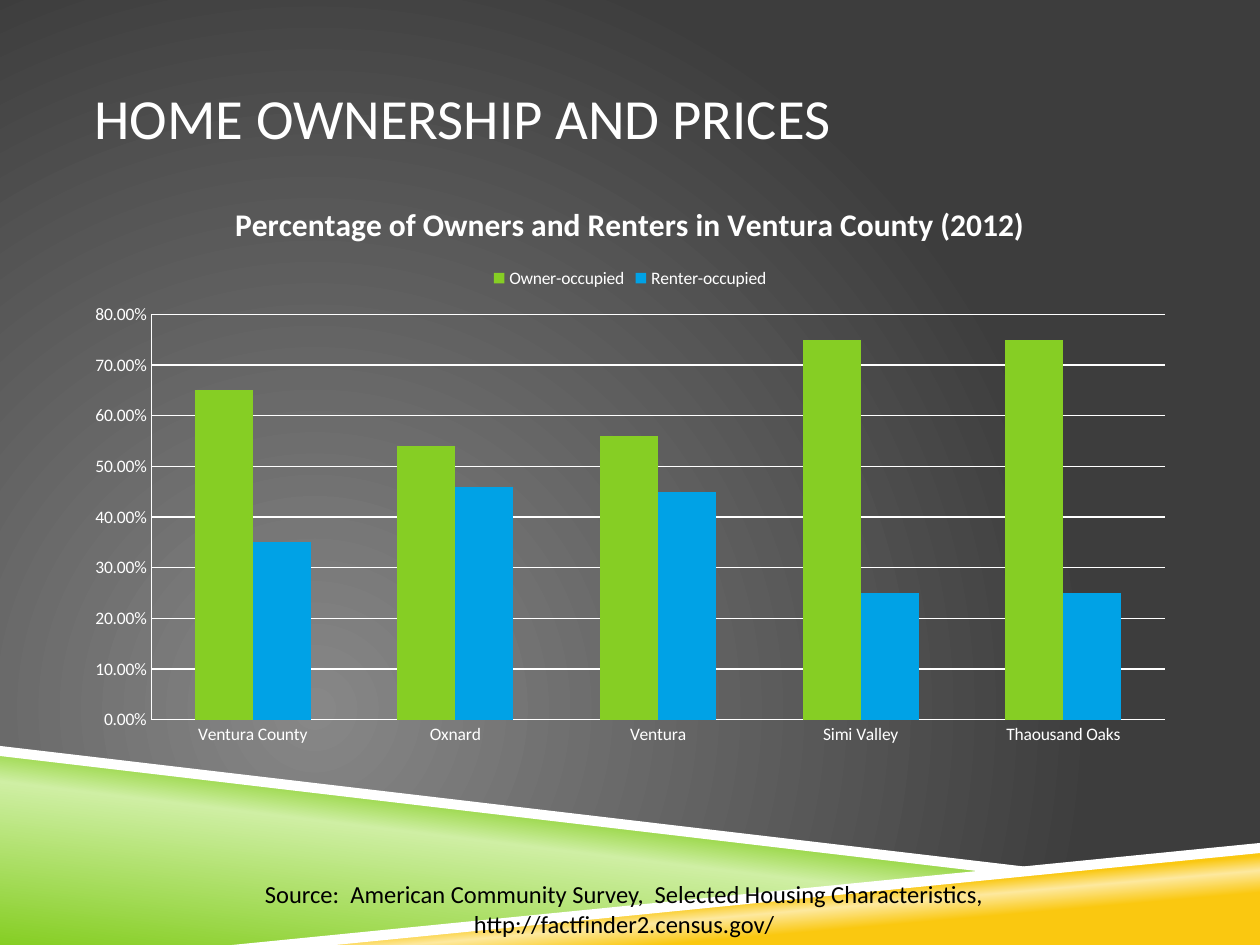
from dataclasses import dataclass

from lxml.etree import SubElement
from pptx import Presentation
from pptx.chart.data import CategoryChartData
from pptx.dml.color import RGBColor
from pptx.enum.chart import XL_CHART_TYPE as ChartType
from pptx.enum.chart import XL_LEGEND_POSITION as LegendPos
from pptx.enum.chart import XL_TICK_MARK as Tick
from pptx.enum.text import MSO_ANCHOR as Anchor
from pptx.enum.text import MSO_AUTO_SIZE as AutoSize
from pptx.enum.text import PP_ALIGN as Align
from pptx.oxml.ns import qn
from pptx.util import Inches, Pt


@dataclass(frozen=True)
class Theme:
    font: str = "Calibri"
    white: str = "FFFFFF"
    black: str = "000000"
    green: str = "86CE24"
    pale_green: str = "CFEFA4"
    blue: str = "00A2E6"
    gold: str = "FAC810"
    pale_gold: str = "FDE99F"
    bg_center: str = "878787"
    bg_edge: str = "3D3D3D"
    title: float = 32.4
    chart_title: float = 18
    source: float = 14
    label: float = 10


T = Theme()


def rgb(color):
    return RGBColor.from_string(color)


def style_font(font, size, color, bold=False):
    font.name, font.size, font.bold = T.font, Pt(size), bold
    font.color.rgb = rgb(color)


def set_gradient(fill, owner, stops, angle=None):
    """Give a gradient of (percent, colour) stops: linear, or circular without an angle."""
    fill.gradient()
    grad = owner.find(".//" + qn("a:gradFill"))
    for child in list(grad):
        grad.remove(child)
    stop_list = SubElement(grad, qn("a:gsLst"))
    for percent, color in stops:
        stop = SubElement(stop_list, qn("a:gs"), pos=str(percent * 1000))
        SubElement(stop, qn("a:srgbClr"), val=color)
    if angle is None:
        circle = SubElement(grad, qn("a:path"), path="circle")
        SubElement(circle, qn("a:fillToRect"), l="50000", t="100000", r="100000", b="50000")
    else:
        SubElement(grad, qn("a:lin"), ang=str(angle * 60000), scaled="0")


def add_polygon(s, points):
    corners = [(Inches(x), Inches(y)) for x, y in points]
    builder = s.shapes.build_freeform(*corners[0], scale=1.0)
    builder.add_line_segments(corners[1:], close=True)
    sp = builder.convert_to_shape()
    sp.shadow.inherit = False
    sp.line.fill.background()
    return sp


def add_wedge(s, points, stops, angle):
    sp = add_polygon(s, points)
    set_gradient(sp.fill, sp._element, stops, angle)


def add_stripe(s, points):
    fill = add_polygon(s, points).fill
    fill.solid()
    fill.fore_color.rgb = rgb(T.white)


def add_text(s, box, lines, size, color, align=Align.LEFT):
    tf = s.shapes.add_textbox(*map(Inches, box)).text_frame
    tf.word_wrap = True
    for i, line in enumerate(lines):
        p = tf.add_paragraph() if i else tf.paragraphs[0]
        p.text, p.alignment = line, align
        style_font(p.font, size, color)
    return tf


def add_column_chart(s, box, title, cats, series):
    data = CategoryChartData(number_format="0.00%")
    data.categories = cats
    for name, values, _ in series:
        data.add_series(name, values)
    chart = s.shapes.add_chart(ChartType.COLUMN_CLUSTERED, *map(Inches, box), data).chart
    style_font(chart.font, T.label, T.white)

    chart.has_title = True
    p = chart.chart_title.text_frame.paragraphs[0]
    p.text = title
    style_font(p.font, T.chart_title, T.white, bold=True)

    chart.has_legend = True
    chart.legend.position = LegendPos.TOP
    chart.legend.include_in_layout = False

    plot = chart.plots[0]
    plot.gap_width, plot.overlap, plot.vary_by_categories = 150, 0, False
    for column, (_, _, color) in zip(plot.series, series):
        column.format.fill.solid()
        column.format.fill.fore_color.rgb = rgb(color)

    values = chart.value_axis
    values.minimum_scale, values.maximum_scale, values.major_unit = 0, 0.8, 0.1
    values.tick_labels.number_format = "0.00%"
    values.tick_labels.number_format_is_linked = False
    values.has_major_gridlines = True
    values.major_gridlines.format.line.color.rgb = rgb(T.white)
    for axis in (values, chart.category_axis):
        axis.major_tick_mark = axis.minor_tick_mark = Tick.NONE
        axis.format.line.color.rgb = rgb(T.white)


def main():
    prs = Presentation()
    prs.slide_width, prs.slide_height = Inches(10), Inches(7.5)
    s = prs.slides.add_slide(prs.slide_layouts[6])
    set_gradient(s.background.fill, s._element, [(0, T.bg_center), (100, T.bg_edge)])

    add_wedge(s, [(0, 5.97), (7.92, 6.92), (2, 7.5), (0, 7.5)],
              [(0, T.green), (52, T.pale_green), (66, T.green)], 277)
    add_wedge(s, [(1.98, 7.5), (10, 6.72), (10, 7.5)],
              [(28, T.gold), (40, T.pale_gold), (48, T.gold)], 265)
    add_stripe(s, [(0, 5.92), (0, 6), (7.9, 6.93), (8.32, 6.9)])
    add_stripe(s, [(10, 6.69), (1.84, 7.5), (2.66, 7.5), (10, 6.77)])

    tf = add_text(s, (0.75, 0.3, 8.5, 1.25), ["HOME OWNERSHIP AND PRICES"], T.title, T.white)
    tf.vertical_anchor = Anchor.MIDDLE
    tf.margin_left = tf.margin_right = 0

    add_column_chart(
        s, (0.58, 1.42, 8.84, 4.58),
        "Percentage of Owners and Renters in Ventura County (2012)",
        ["Ventura County", "Oxnard", "Ventura", "Simi Valley", "Thaousand Oaks"],
        [("Owner-occupied", (0.65, 0.54, 0.56, 0.75, 0.75), T.green),
         ("Renter-occupied", (0.35, 0.46, 0.45, 0.25, 0.25), T.blue)])

    tf = add_text(s, (0.83, 6.93, 8.25, 0.57),
                  ["Source:  American Community Survey,  Selected Housing Characteristics,",
                   "http://factfinder2.census.gov/"], T.source, T.black, Align.CENTER)
    tf.auto_size = AutoSize.SHAPE_TO_FIT_TEXT

    prs.save("out.pptx")


if __name__ == "__main__":
    main()
